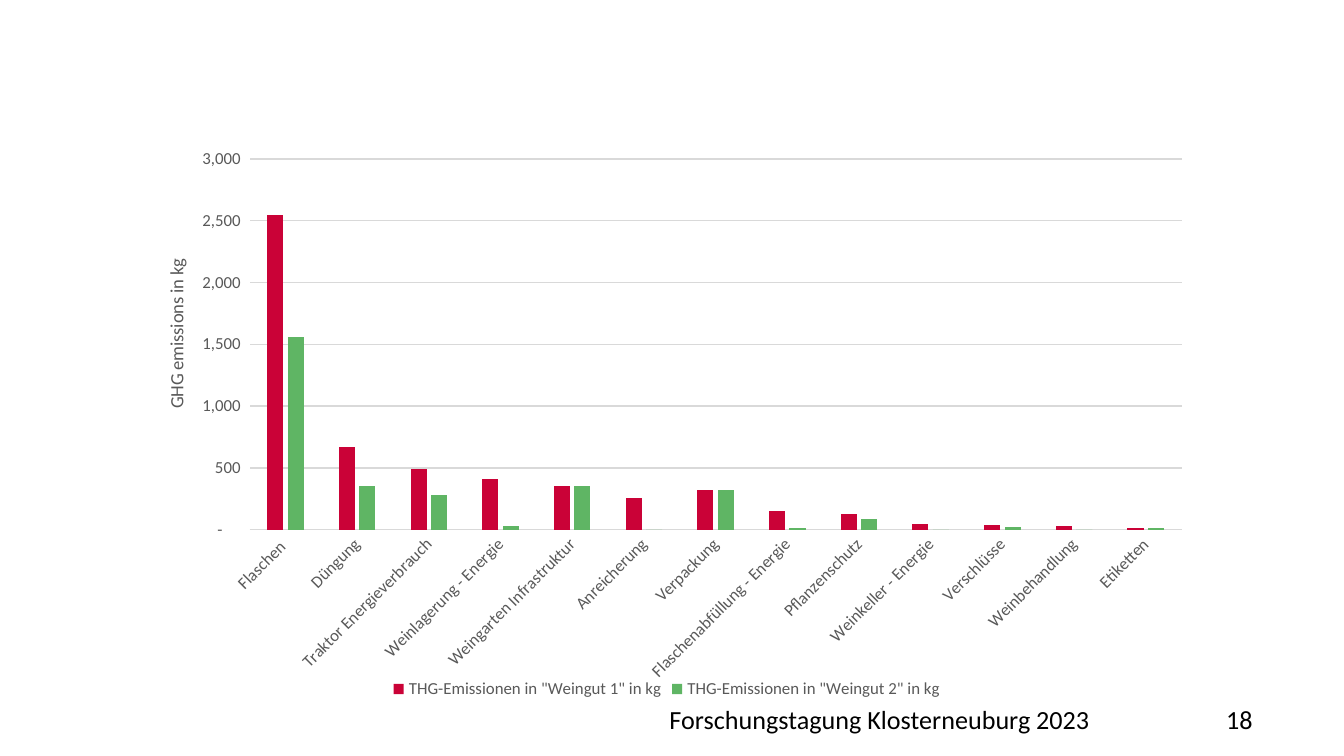
from pptx import Presentation
from pptx.chart.data import CategoryChartData
from pptx.dml.color import RGBColor
from pptx.enum.chart import XL_CHART_TYPE, XL_LEGEND_POSITION, XL_TICK_MARK
from pptx.enum.text import MSO_ANCHOR, PP_ALIGN
from pptx.oxml import parse_xml
from pptx.oxml.ns import nsdecls
from pptx.util import Inches, Pt

hues = {"ink": "000000", "label": "595959", "grid": "D9D9D9",
        "red": "CA0237", "green": "5FB564"}


def style(font, size, hue):
    for key, val in {"name": "Calibri", "size": Pt(size), "bold": False}.items():
        setattr(font, key, val)
    font.color.rgb = RGBColor.from_string(hues[hue])


def locate(node, spot, inner=""):
    for old in node.xpath("c:layout"):
        node.remove(old)
    parts = inner + '<c:xMode val="edge"/><c:yMode val="edge"/>'
    parts += "".join(f'<c:{key} val="{val}"/>' for key, val in spot.items())
    node.insert(len(node.xpath("c:tx")), parse_xml(
        f'<c:layout {nsdecls("c")}><c:manualLayout>{parts}'
        '</c:manualLayout></c:layout>'))


deck = Presentation()
deck.slide_width = Inches(10)
deck.slide_height = deck.slide_width * 9 // 16
wide, high = deck.slide_width, deck.slide_height
slide = deck.slides.add_slide(deck.slide_layouts[6])

rows = [
    ("Flaschen ", 2550, 1560),
    ("Düngung", 670, 350),
    ("Traktor Energieverbrauch", 490, 280),
    ("Weinlagerung - Energie", 410, 30),
    ("Weingarten Infrastruktur", 350, 350),
    ("Anreicherung", 260, 0),
    ("Verpackung", 320, 320),
    ("Flaschenabfüllung - Energie", 150, 10),
    ("Pflanzenschutz", 130, 90),
    ("Weinkeller - Energie", 50, 0),
    ("Verschlüsse", 40, 20),
    ("Weinbehandlung", 30, 0),
    ("Etiketten", 10, 10),
]
names, first, second = zip(*rows)
data = CategoryChartData()
data.categories = names
for num, vals in enumerate((first, second), 1):
    data.add_series(f'THG-Emissionen in "Weingut {num}" in kg', vals)

top, foot = Inches(1.11), Inches(5.24)
chart = slide.shapes.add_chart(
    XL_CHART_TYPE.COLUMN_CLUSTERED, Inches(1.12), top,
    Inches(7.68), foot - top, data).chart
style(chart.font, 10, "ink")
chart.has_title = False
chart.has_legend = True
for key, val in {"position": XL_LEGEND_POSITION.BOTTOM,
                 "include_in_layout": False}.items():
    setattr(chart.legend, key, val)
style(chart.legend.font, 9, "label")

plot = chart.plots[0]
for key, val in {"gap_width": 219, "overlap": -27,
                 "vary_by_categories": False}.items():
    setattr(plot, key, val)
for bar, hue in zip(plot.series, ("red", "green")):
    bar.invert_if_negative = False
    bar.format.fill.solid()
    bar.format.fill.fore_color.rgb = RGBColor.from_string(hues[hue])

cats, vals = chart.category_axis, chart.value_axis
for axis in (cats, vals):
    axis.major_tick_mark = axis.minor_tick_mark = XL_TICK_MARK.NONE
    style(axis.tick_labels.font, 9, "label")
vals.has_major_gridlines = True
for line in (cats.format.line, vals.major_gridlines.format.line):
    line.width = Pt(0.75)
    line.color.rgb = RGBColor.from_string(hues["grid"])
vals.format.line.fill.background()
for key, val in {
        "number_format": r'_-* #,##0_-;\-* #,##0_-;_-* "-"??_-;_-@_',
        "number_format_is_linked": False}.items():
    setattr(vals.tick_labels, key, val)

title = vals.axis_title.text_frame
title.text = "GHG emissions in kg"
style(title.paragraphs[0].runs[0].font, 10, "label")

area = chart.element.xpath("c:chart/c:plotArea")[0]
for place, turn in {"c:catAx/c:txPr": -45, "c:valAx/c:title//c:rich": -90}.items():
    area.xpath(f"{place}/a:bodyPr")[0].set("rot", str(turn * 60000))
locate(area, {"x": 0.096, "y": 0.015, "w": 0.903, "h": 0.67},
       '<c:layoutTarget val="inner"/>')
locate(area.xpath("c:valAx/c:title")[0], {"x": 0.01, "y": 0.19})

for text, left, span in (("18", 0.827, 0.105),
                         ("Forschungstagung Klosterneuburg 2023", 0.059, 0.752)):
    body = slide.shapes.add_textbox(
        int(wide * left), foot, int(wide * span), int(high * 0.04)).text_frame
    for key, val in {"margin_left": 0, "margin_right": 0, "margin_top": 0,
                     "margin_bottom": 0, "word_wrap": True,
                     "vertical_anchor": MSO_ANCHOR.MIDDLE}.items():
        setattr(body, key, val)
    para = body.paragraphs[0]
    para.alignment = PP_ALIGN.RIGHT
    run = para.add_run()
    run.text = text
    style(run.font, 14, "ink")

deck.save("out.pptx")
